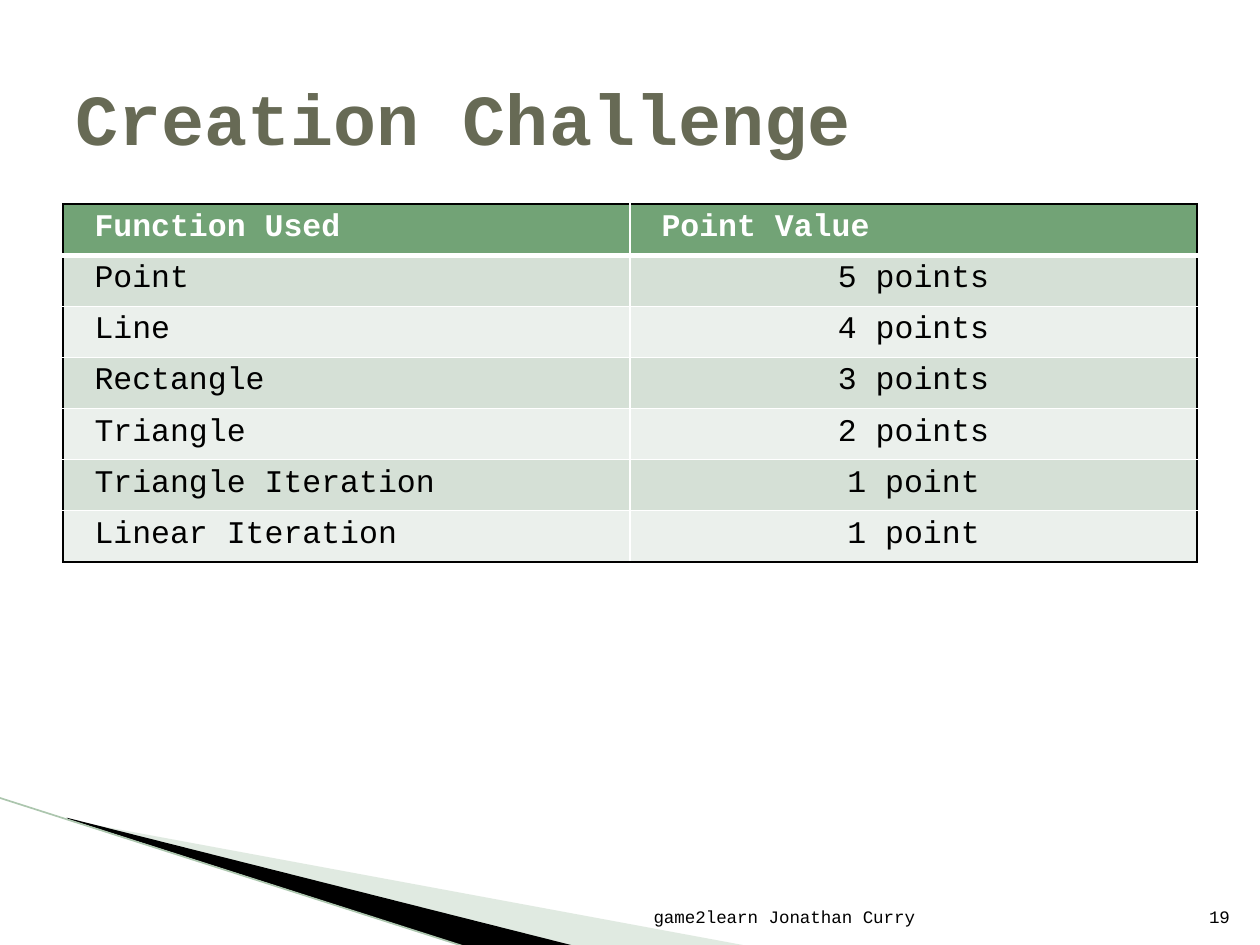
from lxml.etree import SubElement
from pptx import Presentation
from pptx.dml.color import RGBColor
from pptx.enum.shapes import MSO_CONNECTOR
from pptx.enum.text import MSO_ANCHOR, PP_ALIGN
from pptx.oxml.ns import qn
from pptx.util import Inches, Pt

theme = {
    "black": "000000",
    "white": "FFFFFF",
    "header": "72A376",
    "bands": ("D5E0D6", "EBF0EC"),
    "wedge": "B3CBB5",
    "edge": "ACC6AE",
    "title": {"name": "Courier New", "size": Pt(41), "bold": True, "color": "676A55"},
    "heading": {"name": "Courier New", "size": Pt(18), "bold": True, "color": "FFFFFF"},
    "body": {"name": "Courier New", "size": Pt(18), "bold": False, "color": "000000"},
    "footer": {"name": "Courier New", "size": Pt(10), "bold": False, "color": "000000"},
}


def write_text(text_frame, text, text_format, alignment):
    paragraph = text_frame.paragraphs[0]
    paragraph.alignment = alignment
    run = paragraph.add_run()
    run.text = text
    for name, value in text_format.items():
        if name == "color":
            run.font.color.rgb = RGBColor.from_string(value)
        else:
            setattr(run.font, name, value)


def add_border(cell, side, color, width):
    line = SubElement(cell._tc.get_or_add_tcPr(), qn(f"a:ln{side}"), w=str(Pt(width)))
    fill = SubElement(line, qn("a:solidFill"))
    SubElement(fill, qn("a:srgbClr"), val=color)


presentation = Presentation()
presentation.slide_width = Inches(10)
presentation.slide_height = Inches(7.5)
slide = presentation.slides.add_slide(presentation.slide_layouts[5])

wedges = [
    (theme["wedge"], 40, [(0.55, 6.51), (5.95, 7.51), (4.56, 7.51), (0.55, 6.5)]),
    (theme["black"], 100, [(0.53, 6.49), (4.57, 7.51), (3.72, 7.52), (0.54, 6.5)]),
]
for color, opacity, corners in wedges:
    points = [(Inches(x), Inches(y)) for x, y in corners]
    builder = slide.shapes.build_freeform(*points[0])
    builder.add_line_segments(points[1:], close=True)
    wedge = builder.convert_to_shape()
    wedge.shadow.inherit = False
    wedge.line.fill.background()
    wedge.fill.solid()
    wedge.fill.fore_color.rgb = RGBColor.from_string(color)
    if opacity < 100:
        fill_color = wedge._element.spPr.find(qn("a:solidFill"))[0]
        SubElement(fill_color, qn("a:alpha"), val=str(opacity * 1000))

edge = slide.shapes.add_connector(
    MSO_CONNECTOR.STRAIGHT, Inches(-0.01), Inches(6.33), Inches(3.71), Inches(7.52)
)
edge.line.color.rgb = RGBColor.from_string(theme["edge"])
edge.line.width = Pt(0.95)
SubElement(edge._element.spPr, qn("a:effectLst"))

rows = [
    ("Function Used", "Point Value"),
    ("Point", "5 points"),
    ("Line", "4 points"),
    ("Rectangle", "3 points"),
    ("Triangle", "2 points"),
    ("Triangle Iteration", "1 point"),
    ("Linear Iteration", "1 point"),
]
last_row = len(rows) - 1
table = slide.shapes.add_table(
    len(rows), 2, Inches(0.5), Inches(1.62), Inches(9), Inches(2.84)
).table
cell_margins = {
    "margin_left": Inches(0.25),
    "margin_right": Inches(0.25),
    "margin_top": Inches(0.05),
    "margin_bottom": Inches(0.05),
}
for row_index, row in enumerate(rows):
    is_header = row_index == 0
    fill_color = theme["header"] if is_header else theme["bands"][(row_index - 1) % 2]
    text_format = theme["heading"] if is_header else theme["body"]
    for column_index, text in enumerate(row):
        cell = table.cell(row_index, column_index)
        for name, value in cell_margins.items():
            setattr(cell, name, value)
        outer_sides = {
            "L": column_index == 0,
            "R": column_index == 1,
            "T": is_header,
            "B": row_index == last_row,
        }
        for side, is_outer in outer_sides.items():
            under_header = (side, row_index) in (("B", 0), ("T", 1))
            color = theme["black"] if is_outer else theme["white"]
            add_border(cell, side, color, 3 if under_header else 1)
        cell.fill.solid()
        cell.fill.fore_color.rgb = RGBColor.from_string(fill_color)
        centered = column_index == 1 and not is_header
        alignment = PP_ALIGN.CENTER if centered else PP_ALIGN.LEFT
        write_text(cell.text_frame, text, text_format, alignment)

footers = [("game2learn Jonathan Curry", 4.79, 2.57), ("19", 9.46, 0.4)]
for text, left, width in footers:
    footer = slide.shapes.add_textbox(Inches(left), Inches(7.01), Inches(width), Inches(0.4))
    footer.text_frame.word_wrap = True
    footer.text_frame.vertical_anchor = MSO_ANCHOR.BOTTOM
    write_text(footer.text_frame, text, theme["footer"], PP_ALIGN.RIGHT)

title = slide.shapes.title
title_position = {
    "left": Inches(0.5),
    "top": Inches(0.3),
    "width": Inches(9),
    "height": Inches(1.25),
}
for name, value in title_position.items():
    setattr(title, name, value)
title.text_frame.vertical_anchor = MSO_ANCHOR.MIDDLE
write_text(title.text_frame, "Creation Challenge", theme["title"], PP_ALIGN.LEFT)

presentation.save("out.pptx")
